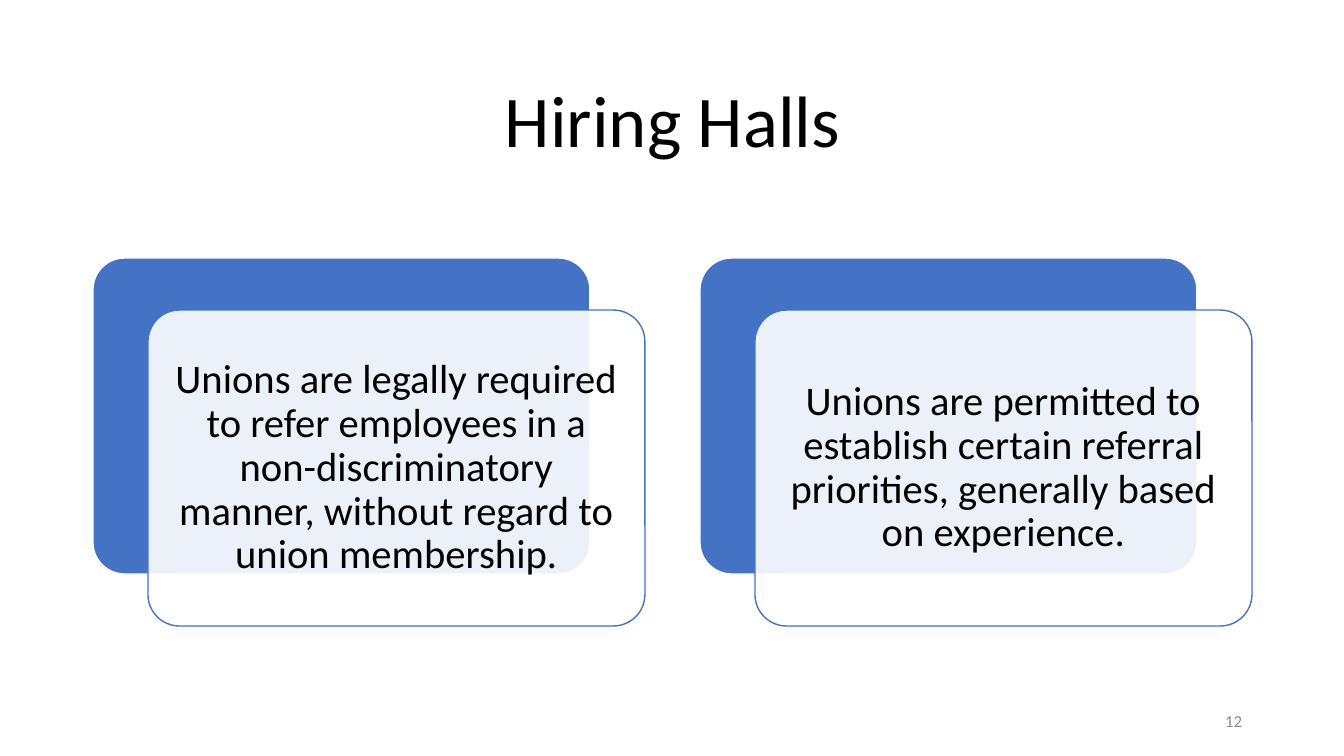
"""Build the Hiring Halls slide with two layered text cards."""
from pptx import Presentation
from pptx.dml.color import RGBColor
from pptx.enum.shapes import MSO_SHAPE
from pptx.enum.text import MSO_ANCHOR, PP_ALIGN
from pptx.oxml.ns import qn
from pptx.util import Emu, Pt
from lxml import etree

BLACK = RGBColor(0x00, 0x00, 0x00)
WHITE = RGBColor(0xFF, 0xFF, 0xFF)
BLUE = RGBColor(0x44, 0x72, 0xC4)
GRAY = RGBColor(0x8C, 0x8C, 0x8C)

SLIDE_WIDTH, SLIDE_HEIGHT = 1344, 756
SCALE = 12192000 / SLIDE_WIDTH
CARD_WIDTH, CARD_HEIGHT = 497, 316
CARD_LEFT, CARD_TOP, CARD_PITCH = 93, 258, 607
OFFSET_X, OFFSET_Y = 55, 52
TEXT_INSET = 12
CARD_TEXTS = [
    "Unions are legally required to refer employees in a non-discriminatory "
    "manner, without regard to union membership.",
    "Unions are permitted to establish certain referral priorities, "
    "generally based on experience.",
]


def px(*lengths):
    return [Emu(round(length * SCALE)) for length in lengths]


def write_text(shape, text, size, color, alignment, line_spacing=1.0):
    frame = shape.text_frame
    frame.word_wrap = True
    frame.vertical_anchor = MSO_ANCHOR.MIDDLE
    paragraph = frame.paragraphs[0]
    paragraph.text = text
    paragraph.alignment = alignment
    paragraph.line_spacing = line_spacing
    paragraph.font.name = "Calibri"
    paragraph.font.size = Pt(size)
    paragraph.font.color.rgb = color


presentation = Presentation()
presentation.slide_width, presentation.slide_height = px(SLIDE_WIDTH, SLIDE_HEIGHT)
slide = presentation.slides.add_slide(presentation.slide_layouts[6])

title = slide.shapes.add_textbox(*px(93, 61, 1159, 125))
write_text(title, "Hiring Halls", 52, BLACK, PP_ALIGN.CENTER, 0.9)

for index, text in enumerate(CARD_TEXTS):
    left = CARD_LEFT + index * CARD_PITCH
    layers = [
        (left, CARD_TOP, BLUE, WHITE),
        (left + OFFSET_X, CARD_TOP + OFFSET_Y, WHITE, BLUE),
    ]
    for layer_left, layer_top, fill_color, line_color in layers:
        card = slide.shapes.add_shape(
            MSO_SHAPE.ROUNDED_RECTANGLE,
            *px(layer_left, layer_top, CARD_WIDTH, CARD_HEIGHT),
        )
        card.adjustments[0] = 0.1
        card.shadow.inherit = False
        card.fill.solid()
        card.fill.fore_color.rgb = fill_color
        card.line.color.rgb = line_color
        card.line.width = Pt(1)

    fill_element = card.fill._xPr.find(qn("a:solidFill"))
    etree.SubElement(fill_element[0], qn("a:alpha"), val="90000")
    frame = card.text_frame
    frame.margin_left, frame.margin_top = px(TEXT_INSET, TEXT_INSET)
    frame.margin_right, frame.margin_bottom = px(TEXT_INSET, TEXT_INSET)
    write_text(card, text, 29, BLACK, PP_ALIGN.CENTER, 0.9)

slide_number = slide.shapes.add_textbox(*px(950, 701, 302, 40))
write_text(slide_number, "12", 12, GRAY, PP_ALIGN.RIGHT)

presentation.save("out.pptx")
